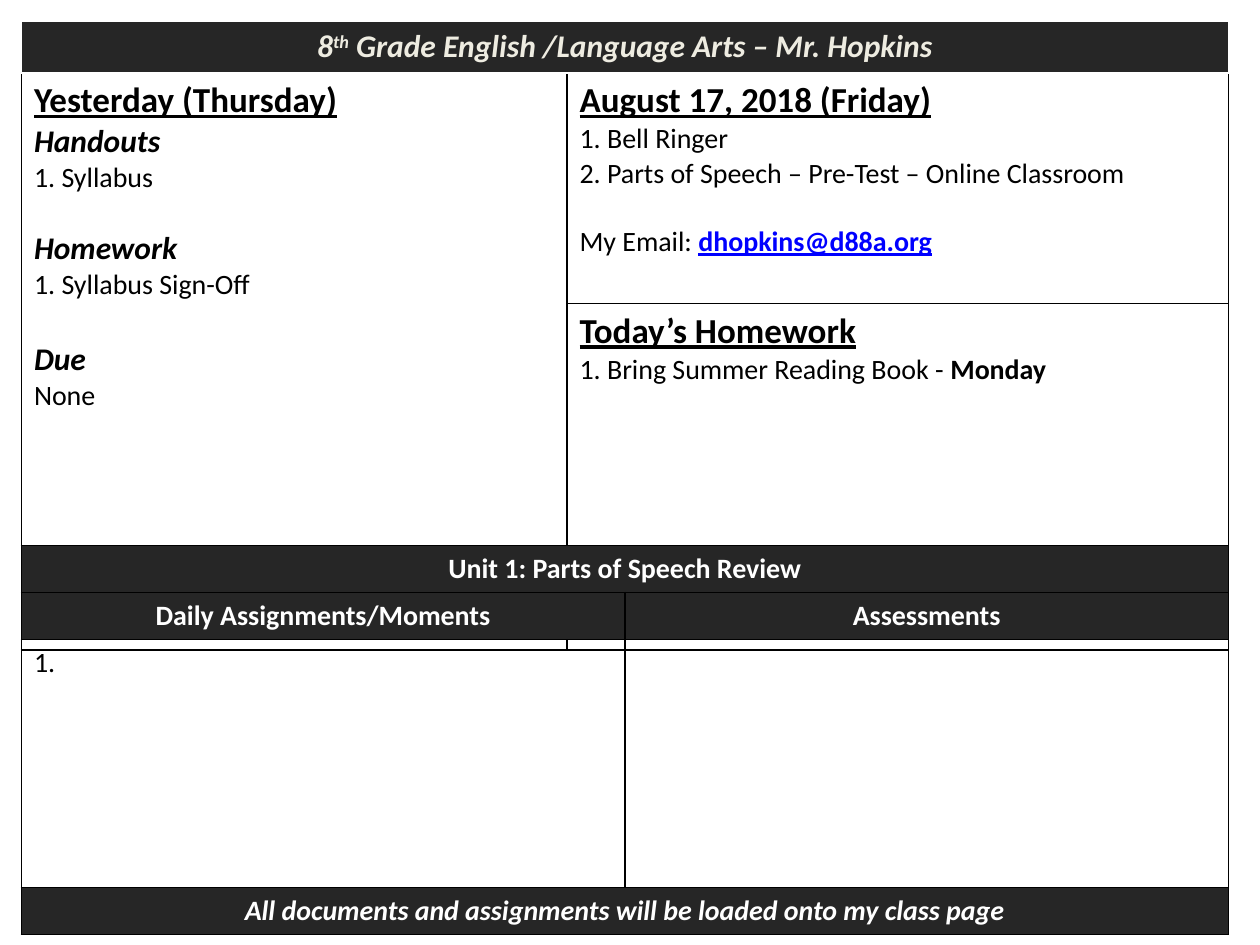
from dataclasses import dataclass

from lxml import etree
from pptx import Presentation
from pptx.dml.color import RGBColor
from pptx.enum.text import PP_ALIGN
from pptx.oxml.ns import qn
from pptx.util import Inches, Pt

CENTER = PP_ALIGN.CENTER
BLANK_LAYOUT = 6


@dataclass(frozen=True)
class Theme:
    font: str = "Calibri"
    ink: str = "000000"
    band: str = "262626"
    cream: str = "EEECE1"
    white: str = "FFFFFF"
    link: str = "0000FF"
    heading: int = 20
    subheading: int = 18
    body: int = 16
    border: int = 1


THEME = Theme()
MARGIN = 0.17
CONTENT_WIDTH = 9.58
HEADER_BOX = (MARGIN, 0.17, CONTENT_WIDTH, 0.41)
AGENDA_BOX = (MARGIN, 0.58, CONTENT_WIDTH, 3.66)
UNIT_BOX = (MARGIN, 4.33, CONTENT_WIDTH, 3.08)
BAND_HEIGHT = 0.37
YESTERDAY_WIDTH = 4.33
YESTERDAY_HANG = 0.38
TODAY_HANG = 0.58

HEADING = {"size": THEME.heading, "bold": True, "underline": True}
SUBHEADING = {"size": THEME.subheading, "bold": True, "italic": True}
BAND = {"color": THEME.white, "bold": True, "align": CENTER}


def write(cell, text, paragraph=None, size=THEME.body, color=THEME.ink, bold=False,
          italic=False, underline=False, align=None, gap=0, hang=0, baseline=0):
    """Add text to a cell as a new paragraph, or as a run of a given one."""
    if paragraph is None:
        paragraph = cell.text_frame.paragraphs[-1]
        if paragraph.runs:
            paragraph = cell.text_frame.add_paragraph()
        if hang:
            properties = paragraph._p.get_or_add_pPr()
            properties.set("marL", str(Inches(hang)))
            properties.set("indent", str(-Inches(hang)))
        if align is not None:
            paragraph.alignment = align
        if gap:
            paragraph.space_before = Pt(gap)
    run = paragraph.add_run()
    run.text = text
    font = run.font
    font.name, font.size = THEME.font, Pt(size)
    font.bold, font.italic, font.underline = bold, italic, underline
    font.color.rgb = RGBColor.from_string(color)
    if baseline:
        font._element.set("baseline", str(baseline * 1000))
    return paragraph


def fill_band(cell):
    cell.fill.solid()
    cell.fill.fore_color.rgb = RGBColor.from_string(THEME.band)


def add_borders(cell):
    properties = cell._tc.get_or_add_tcPr()
    for position, side in enumerate(("lnL", "lnR", "lnT", "lnB")):
        line = etree.Element(qn(f"a:{side}"), w=str(Pt(THEME.border)))
        fill = etree.SubElement(line, qn("a:solidFill"))
        etree.SubElement(fill, qn("a:srgbClr"), val=THEME.ink)
        properties.insert(position, line)


def add_grid(slide, box, columns, rows, bordered=True):
    """Place an unstyled table with the given column widths and row heights."""
    frame = slide.shapes.add_table(len(rows), len(columns), *map(Inches, box))
    table = frame.table
    table.first_row = table.horz_banding = False
    for column, width in zip(table.columns, columns):
        column.width = Inches(width)
    for row, height in zip(table.rows, rows):
        row.height = Inches(height)
    for cell in table.iter_cells():
        cell.fill.background()
        if bordered:
            add_borders(cell)
    return table


def add_header(slide, box):
    cell = add_grid(slide, box, [box[2]], [box[3]], bordered=False).cell(0, 0)
    fill_band(cell)
    style = {**SUBHEADING, "color": THEME.cream}
    paragraph = write(cell, "8", align=CENTER, **style)
    write(cell, "th", paragraph, baseline=30, **style)
    write(cell, " Grade English /Language Arts – Mr. Hopkins", paragraph, **style)


def add_agenda(slide, box):
    columns = [YESTERDAY_WIDTH, box[2] - YESTERDAY_WIDTH]
    table = add_grid(slide, box, columns, [box[3] / 2] * 2)

    # Yesterday, over both rows
    yesterday = table.cell(0, 0)
    yesterday.merge(table.cell(1, 0))
    write(yesterday, "Yesterday (Thursday)", **HEADING)
    sections = [("Handouts", "1. Syllabus", 0),
                ("Homework", "1. Syllabus Sign-Off", 19.5),
                ("Due", "None", 22)]
    for title, item, gap in sections:
        write(yesterday, title, gap=gap, **SUBHEADING)
        write(yesterday, item, hang=YESTERDAY_HANG)

    # Today
    today = table.cell(0, 1)
    write(today, "August 17, 2018 (Friday)", hang=TODAY_HANG, **HEADING)
    write(today, "1. Bell Ringer", hang=TODAY_HANG)
    write(today, "2. Parts of Speech – Pre-Test – Online Classroom", hang=TODAY_HANG)
    email = write(today, "My Email: ", gap=19.5, hang=TODAY_HANG)
    write(today, "dhopkins@d88a.org", email, color=THEME.link, bold=True, underline=True)

    # Homework
    homework = table.cell(1, 1)
    write(homework, "Today’s Homework", hang=TODAY_HANG, **HEADING)
    task = write(homework, "1. Bring Summer Reading Book - ", hang=TODAY_HANG)
    write(homework, "Monday", task, bold=True)


def add_unit(slide, box):
    rows = [BAND_HEIGHT, BAND_HEIGHT, box[3] - 3 * BAND_HEIGHT, BAND_HEIGHT]
    table = add_grid(slide, box, [box[2] / 2] * 2, rows)

    # Full-width bands
    for row, text, italic in [
        (0, "Unit 1: Parts of Speech Review", False),
        (3, "All documents and assignments will be loaded onto my class page", True),
    ]:
        cell = table.cell(row, 0)
        cell.merge(table.cell(row, 1))
        fill_band(cell)
        write(cell, text, italic=italic, **BAND)

    # Column headings and entries
    for column, text in enumerate(["Daily Assignments/Moments", "Assessments"]):
        cell = table.cell(1, column)
        fill_band(cell)
        write(cell, text, **BAND)
    write(table.cell(2, 0), "1.")


def main():
    presentation = Presentation()
    presentation.slide_width, presentation.slide_height = Inches(10), Inches(7.5)
    slide = presentation.slides.add_slide(presentation.slide_layouts[BLANK_LAYOUT])
    add_agenda(slide, AGENDA_BOX)
    add_header(slide, HEADER_BOX)
    add_unit(slide, UNIT_BOX)
    presentation.save("out.pptx")


if __name__ == "__main__":
    main()
